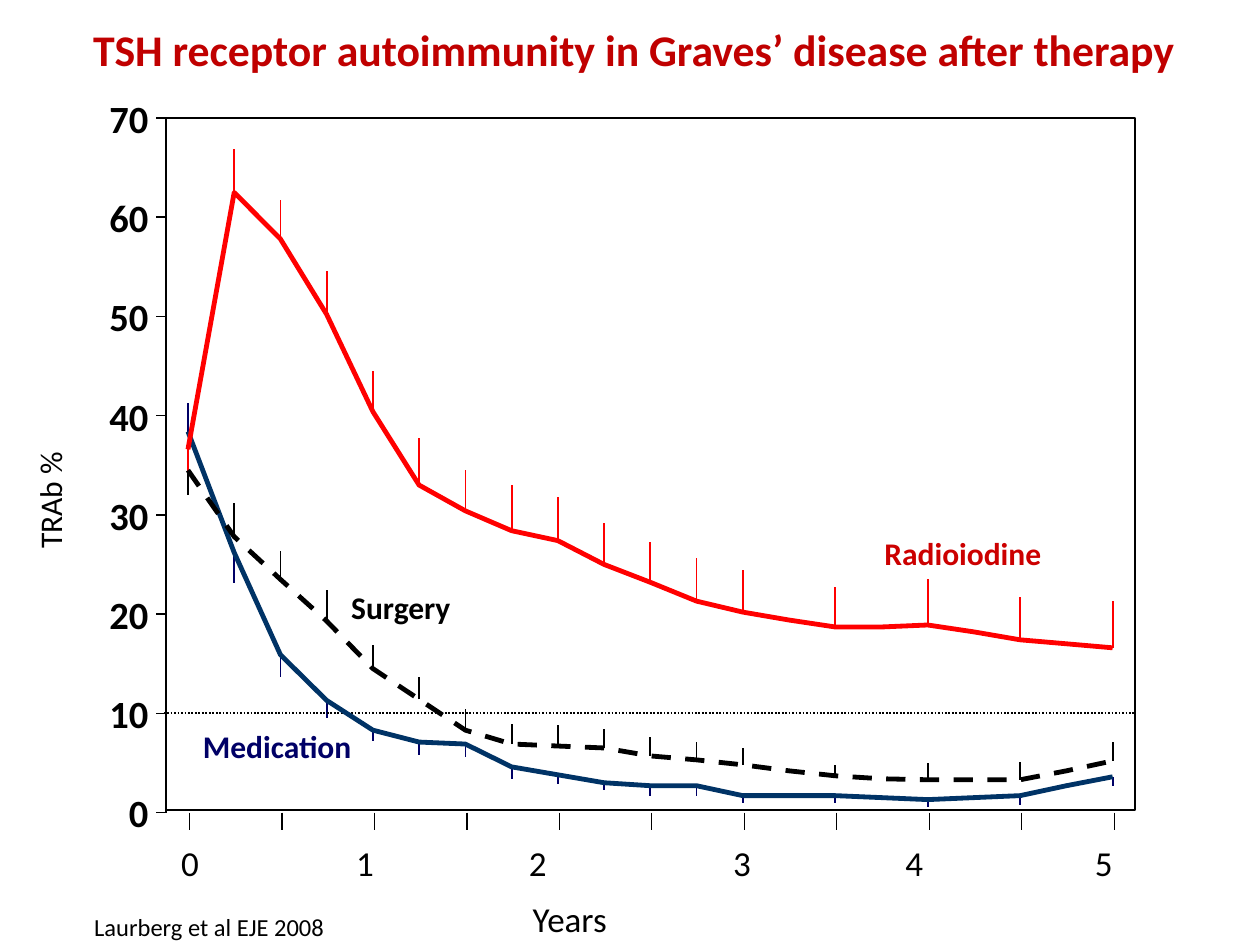
from lxml import etree
from pptx import Presentation
from pptx.dml.color import RGBColor
from pptx.enum.dml import MSO_LINE
from pptx.enum.shapes import MSO_CONNECTOR, MSO_SHAPE
from pptx.enum.text import MSO_ANCHOR, MSO_AUTO_SIZE, PP_ALIGN
from pptx.oxml.ns import qn
from pptx.util import Cm, Pt

STRAIGHT = MSO_CONNECTOR.STRAIGHT
RECT = MSO_SHAPE.RECTANGLE
DASH, DOT = MSO_LINE.DASH, MSO_LINE.ROUND_DOT
TOP, MIDDLE = MSO_ANCHOR.TOP, MSO_ANCHOR.MIDDLE
LEFT, CENTER, RIGHT = PP_ALIGN.LEFT, PP_ALIGN.CENTER, PP_ALIGN.RIGHT
FIXED = MSO_AUTO_SIZE.NONE

FONT = "Calibri"
BLACK, NAVY, BLUE, RED = "000000", "000066", "003366", "FF0000"
EDGE, END, BASE = 3.35, 22.88, 16.38
START, STEP, UNIT = 3.79, 0.932, 0.2

MEDS = [38.4, 26.2, 15.9, 11.3, 8.3, 7.1, 6.9, 4.6, 3.8, 3.0, 2.7,
        2.7, 1.7, 1.7, 1.7, 1.5, 1.3, 1.5, 1.7, 2.7, 3.6]
MED_TIPS = [41.3, 23.1, 13.7, 9.5, 7.2, 5.8, 5.6, 3.4, 2.9, 2.3, 1.7,
            1.7, 1.0, None, 1.0, None, 0.6, None, 0.8, None, 2.7]
SURG = [34.5, 27.8, 23.5, 19.3, 14.5, 11.4, 8.3, 6.9, 6.7, 6.5, 5.7,
        5.3, 4.8, 4.2, 3.7, 3.4, 3.3, 3.3, 3.3, 4.2, 5.2]
SURG_TIPS = [32.0, 31.2, 26.4, 22.4, 16.9, 13.7, 10.4, 8.9, 8.8, 8.4, 7.6,
             7.1, 6.5, None, 4.8, None, 5.0, None, 5.1, None, 7.1]
RADIO = [36.6, 62.5, 57.8, 50.2, 40.4, 33.0, 30.4, 28.4, 27.4, 25.0, 23.2,
         21.3, 20.2, 19.4, 18.7, 18.7, 18.9, 18.2, 17.4, 17.0, 16.6]
RADIO_TIPS = [34.2, 66.9, 61.7, 54.6, 44.5, 37.7, 34.5, 33.0, 31.8, 29.2, 27.3,
              25.7, 24.4, None, 22.7, None, 23.5, None, 21.7, None, 21.3]
SERIES = [
    (MEDS, MED_TIPS, BLUE, NAVY, None),
    (SURG, SURG_TIPS, BLACK, BLACK, DASH),
    (RADIO, RADIO_TIPS, RED, RED, None),
]
LABELS = [
    ("Years", (10.49, 17.96, 2.36, 1.09), 20, BLACK, False),
    ("Radioiodine", (17.58, 10.64, 4.14, 1.02), 18, "CC0000", True),
    ("Surgery", (6.83, 11.73, 2.92, 1.02), 18, BLACK, True),
    ("Medication", (3.84, 14.53, 3.84, 1.7), 18, NAVY, True),
    ("Laurberg et al EJE 2008", (1.65, 18.26, 5.36, 0.86), 14, BLACK, False),
]
STOPS = [3.53, 7.01, 11.13, 14.6, 18.42]


def paint(text):
    """Turn a hex string into a colour."""
    return RGBColor.from_string(text)


def spot(step, value):
    """Give the place of a value at a quarter-year step."""
    return Cm(START + STEP * step), Cm(BASE - UNIT * value)


def stroke(line, hue, width, dash=None):
    """Style a line or an outline."""
    line.color.rgb = paint(hue)
    line.width = Pt(width)
    if dash:
        line.dash_style = dash


def rule(slide, start, end, hue, width, dash=None):
    """Draw a straight line between two points."""
    link = slide.shapes.add_connector(STRAIGHT, *start, *end)
    etree.SubElement(link._element.spPr, qn("a:effectLst"))
    stroke(link.line, hue, width, dash)


def curve(slide, points, hue, dash):
    """Draw an open line through the points."""
    pen = slide.shapes.build_freeform(*points[0])
    pen.add_line_segments(points[1:], close=False)
    shape = pen.convert_to_shape()
    shape.shadow.inherit = False
    shape.fill.background()
    stroke(shape.line, hue, 2.75, dash)


def style(frame, size, hue, bold, align):
    """Format the text of a frame."""
    for para in frame.paragraphs:
        para.alignment = align
        for run in para.runs:
            run.font.name = FONT
            run.font.size = Pt(size)
            run.font.bold = bold
            run.font.color.rgb = paint(hue)


def label(slide, text, place, size, hue, bold, align=LEFT):
    """Add a text box on one line."""
    box = slide.shapes.add_textbox(*map(Cm, place))
    box.text_frame.word_wrap = False
    box.text_frame.text = text
    style(box.text_frame, size, hue, bold, align)
    return box


def head(slide, text):
    """Fill and place the title."""
    title = slide.shapes.title
    title.left, title.top, title.width, title.height = map(
        Cm, (-0.23, 0.33, 26.01, 1.32))
    frame = title.text_frame
    frame.text = text
    frame.word_wrap = False
    frame.auto_size = FIXED
    frame.vertical_anchor = TOP
    style(frame, 25, "C00000", True, CENTER)


def whiskers(slide, values, tips, hue):
    """Draw the error lines of a series."""
    for step, (value, tip) in enumerate(zip(values, tips)):
        if tip is not None:
            rule(slide, spot(step, value), spot(step, tip), hue, 1)


def frame_plot(slide):
    """Draw the border of the plot and the limit at ten percent."""
    box = slide.shapes.add_shape(
        RECT, Cm(EDGE), Cm(2.38), Cm(END - EDGE), Cm(13.95))
    box.shadow.inherit = False
    box.fill.background()
    stroke(box.line, BLACK, 0.88)
    rule(slide, (Cm(EDGE), Cm(2.38)), (Cm(EDGE), Cm(BASE)), BLACK, 0.88)
    limit = spot(0, 10)[1]
    rule(slide, (Cm(3.3), limit), (Cm(END), limit), BLACK, 1, DOT)


def y_axis(slide):
    """Draw ticks and numbers up the left side."""
    for value in range(0, 71, 10):
        top = BASE - UNIT * value
        rule(slide, (Cm(3.15), Cm(top)), (Cm(EDGE), Cm(top)), BLACK, 0.88)
        box = label(slide, str(value), (2.13, top - 0.47, 0.86, 0.94),
                    22, BLACK, True, RIGHT)
        frame = box.text_frame
        frame.margin_left = frame.margin_right = 0
        frame.margin_top = frame.margin_bottom = 0
        frame.vertical_anchor = MIDDLE
    name = label(slide, "TRAb %", (-0.43, 9.37, 2.87, 1.02), 18, BLACK, False)
    name.rotation = 270


def x_axis(slide):
    """Draw ticks and tabbed year numbers along the bottom."""
    for step in range(0, 21, 2):
        left = Cm(START + 0.03 + STEP * step)
        rule(slide, (left, Cm(BASE)), (left, Cm(16.74)), BLACK, 0.75)
    box = label(slide, "\t".join(map(str, range(6))),
                (3.4, 16.84, 21.23, 1.09), 20, BLACK, False)
    box.text_frame.word_wrap = True
    props = box.text_frame.paragraphs[0]._p.get_or_add_pPr()
    tabs = etree.SubElement(props, qn("a:tabLst"))
    for stop in STOPS:
        etree.SubElement(tabs, qn("a:tab"), pos=str(Cm(stop)), algn="l")


def main():
    """Build the slide and save it."""
    deck = Presentation()
    deck.slide_width, deck.slide_height = Cm(25.4), Cm(19.05)
    slide = deck.slides.add_slide(deck.slide_layouts[5])
    head(slide, "TSH receptor autoimmunity in Graves’ disease after therapy")
    for values, tips, _, hue, _ in SERIES:
        whiskers(slide, values, tips, hue)
    frame_plot(slide)
    y_axis(slide)
    x_axis(slide)
    for values, _, hue, _, dash in SERIES:
        curve(slide, [spot(*pair) for pair in enumerate(values)], hue, dash)
    for item in LABELS:
        label(slide, *item)
    deck.save("out.pptx")


if __name__ == "__main__":
    main()
